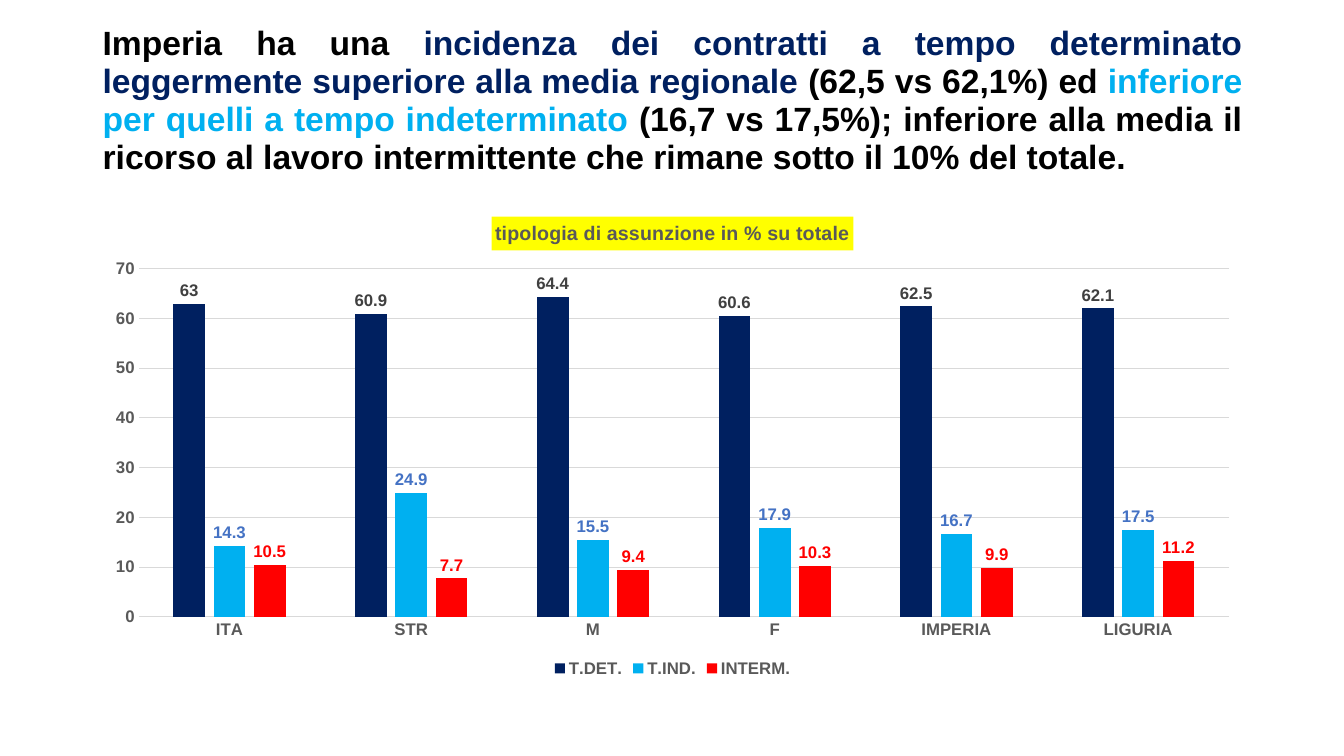
from pptx import Presentation
from pptx.chart.data import CategoryChartData
from pptx.dml.color import RGBColor
from pptx.enum import chart as ch, text
from pptx.util import Inches, Pt

THEME = {
    "font": "Arial",
    "black": "000000", "navy": "002060", "sky": "00B0F0", "red": "FF0000",
    "blue": "4472C4", "dark": "404040", "grey": "595959", "grid": "D9D9D9",
    "yellow": "FFFF00",
    "headline": 24, "chart_title": 14, "small": 12,
}

HEADLINE = [
    ("Imperia ha una ", "black"),
    ("incidenza dei contratti a tempo determinato leggermente superiore "
     "alla media regionale ", "navy"),
    ("(62,5 vs 62,1%) ed ", "black"),
    ("inferiore per quelli a tempo indeterminato", "sky"),
    (" (16,7 vs 17,5%); inferiore alla media il ricorso al lavoro "
     "intermittente che rimane sotto il 10% del totale.", "black"),
]
CHART_TITLE = "tipologia di assunzione in % su totale"
CATEGORIES = ["ITA", "STR", "M", "F", "IMPERIA", "LIGURIA"]
# name, values, bar colour, label colour
SERIES = [
    ("T.DET.", [63, 60.9, 64.4, 60.6, 62.5, 62.1], "navy", "dark"),
    ("T.IND.", [14.3, 24.9, 15.5, 17.9, 16.7, 17.5], "sky", "blue"),
    ("INTERM.", [10.5, 7.7, 9.4, 10.3, 9.9, 11.2], "red", "red"),
]
LEFT, WIDTH = Inches(0.92), Inches(11.5)


def color(name):
    return RGBColor.from_string(THEME[name])


def set_font(font, size, shade):
    formats = {"name": THEME["font"], "size": Pt(THEME[size]), "bold": True}
    for key, value in formats.items():
        setattr(font, key, value)
    font.color.rgb = color(shade)


def set_line(line):
    line.color.rgb = color("grid")
    line.width = Pt(0.75)


def add_headline(page):
    frame = page.shapes.add_textbox(LEFT, Inches(0.16), WIDTH, Inches(1.69)).text_frame
    frame.word_wrap = True
    frame.vertical_anchor = text.MSO_ANCHOR.MIDDLE
    para = frame.paragraphs[0]
    para.alignment = text.PP_ALIGN.JUSTIFY
    para.line_spacing = 0.94
    for words, shade in HEADLINE:
        span = para.add_run()
        span.text = words
        set_font(span.font, "headline", shade)


def style_axes(chart):
    for axis in (chart.category_axis, chart.value_axis):
        axis.major_tick_mark = axis.minor_tick_mark = ch.XL_TICK_MARK.NONE
        set_font(axis.tick_labels.font, "small", "grey")
    set_line(chart.category_axis.format.line)
    values = chart.value_axis
    values.minimum_scale, values.maximum_scale, values.major_unit = 0, 70, 10
    values.format.line.fill.background()
    set_line(values.major_gridlines.format.line)


def style_title(chart):
    title = chart.chart_title
    title.include_in_layout = False
    title.format.fill.solid()
    title.format.fill.fore_color.rgb = color("yellow")
    span = title.text_frame.paragraphs[0].add_run()
    span.text = CHART_TITLE
    set_font(span.font, "chart_title", "grey")


def style_bars(plot):
    plot.gap_width, plot.overlap = 219, -27
    plot.vary_by_categories = False
    for series, (_, _, bar_color, label_color) in zip(plot.series, SERIES):
        series.format.fill.solid()
        series.format.fill.fore_color.rgb = color(bar_color)
        series.invert_if_negative = False
        labels = series.data_labels
        labels.show_value = True
        labels.position = ch.XL_LABEL_POSITION.OUTSIDE_END
        set_font(labels.font, "small", label_color)


def add_contract_chart(page):
    data = CategoryChartData()
    data.categories = CATEGORIES
    for name, values, *_ in SERIES:
        data.add_series(name, values)
    chart = page.shapes.add_chart(ch.XL_CHART_TYPE.COLUMN_CLUSTERED,
                                  LEFT, Inches(2), WIDTH, Inches(4.76), data).chart
    set_font(chart.font, "small", "black")
    style_title(chart)
    style_axes(chart)
    style_bars(chart.plots[0])
    chart.has_legend = True
    chart.legend.position = ch.XL_LEGEND_POSITION.BOTTOM
    chart.legend.include_in_layout = False
    set_font(chart.legend.font, "small", "grey")


def main():
    deck = Presentation()
    deck.slide_width, deck.slide_height = Inches(13.33), Inches(7.5)
    page = deck.slides.add_slide(deck.slide_layouts[6])
    add_headline(page)
    add_contract_chart(page)
    deck.save("out.pptx")


if __name__ == "__main__":
    main()
